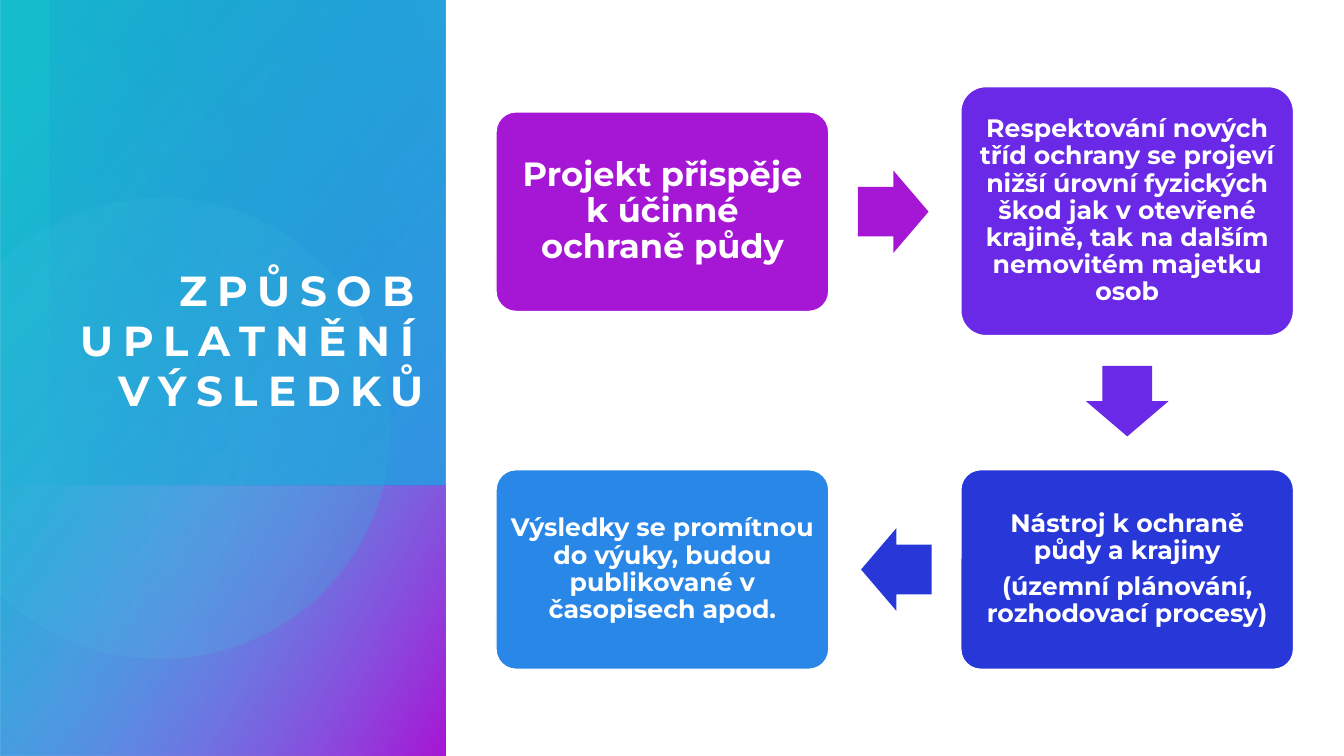
from pptx import Presentation
from pptx.dml.color import RGBColor
from pptx.enum.shapes import MSO_SHAPE
from pptx.enum.text import MSO_ANCHOR, MSO_AUTO_SIZE, PP_ALIGN
from pptx.oxml.ns import qn
from pptx.util import Pt
from lxml import etree

PX = 9144
FONT = "Montserrat"
RECT = MSO_SHAPE.RECTANGLE
ROUNDED = MSO_SHAPE.ROUNDED_RECTANGLE
ARROW = MSO_SHAPE.RIGHT_ARROW
CENTER, RIGHT = PP_ALIGN.CENTER, PP_ALIGN.RIGHT
MIDDLE, BOTTOM = MSO_ANCHOR.MIDDLE, MSO_ANCHOR.BOTTOM

WHITE = RGBColor(0xFF, 0xFF, 0xFF)
PURPLE = RGBColor(0xA6, 0x17, 0xD5)
VIOLET = RGBColor(0x69, 0x29, 0xE7)
INDIGO = RGBColor(0x28, 0x37, 0xD8)
BLUE = RGBColor(0x29, 0x87, 0xE7)
PALE_BLUE = RGBColor(0x7F, 0xB7, 0xF1)
TEAL = RGBColor(0x16, 0xBD, 0xCD)
PALE_TEAL = RGBColor(0x66, 0xE3, 0xEF)

PANELS = [
    ((-154, 154, 750, 442), 270, 50, [(8, TEAL, 100), (100, BLUE, 89)]),
    ((86, 395, 269, 442), 270, 60, [(0, PALE_BLUE, 0), (99, PURPLE, 100)]),
]
OVERLAY = ((5, 45, 481, 392), 90, 110, [(0, BLUE, 29), (100, INDIGO, 0)])

DISC_START = (164, 196)
DISC_CURVES = [
    [(261, 198), (350, 263), (378, 362)],
    [(413, 483), (343, 610), (222, 644)],
    [(146, 666), (68, 647), (12, 600)],
    [(0, 589)],
    [(0, 261)],
    [(15, 247)],
    [(38, 229), (65, 214), (95, 205)],
    [(118, 199), (141, 196), (164, 196)],
]

BOXES = [
    ((492, 111, 330, 198), PURPLE, 24, 10,
     ["Projekt přispěje k účinné ochraně půdy"]),
    ((953, 86, 330, 247), VIOLET, 18, 7,
     ["Respektování nových tříd ochrany se projeví nižší úrovní fyzických "
      "škod jak v otevřené krajině, tak na dalším nemovitém majetku osob"]),
    ((953, 466, 330, 198), INDIGO, 18, 7,
     ["Nástroj k ochraně půdy a krajiny",
      "(územní plánování, rozhodovací procesy)"]),
    ((492, 466, 330, 198), BLUE, 18, 7,
     ["Výsledky se promítnou do výuky, budou publikované v časopisech apod."]),
]
ARROWS = [
    ((851, 169), 0, PURPLE),
    ((1083, 357), 90, VIOLET),
    ((854, 524), 180, INDIGO),
]


def px(values):
    return [v * PX for v in values]


def write(tf, lines, size, align, anchor, inset=0, spacing=1.0, after=0,
          tracking=0):
    tf.word_wrap = True
    tf.auto_size = MSO_AUTO_SIZE.NONE
    tf.vertical_anchor = anchor
    tf.margin_left = tf.margin_right = inset * PX
    tf.margin_top = tf.margin_bottom = inset * PX
    for i, line in enumerate(lines):
        p = tf.add_paragraph() if i else tf.paragraphs[0]
        p.alignment = align
        p.line_spacing = spacing
        p.space_before = Pt(0)
        p.space_after = Pt(after)
        r = p.add_run()
        r.text = line
        r.font.name = FONT
        r.font.size = Pt(size)
        r.font.bold = True
        r.font.color.rgb = WHITE
        if tracking:
            r.font._element.set("spc", str(tracking * 100))


def add_solid(slide, kind, box, color):
    sp = slide.shapes.add_shape(kind, *px(box))
    sp.shadow.inherit = False
    sp.fill.solid()
    sp.fill.fore_color.rgb = color
    sp.line.fill.background()
    return sp


def set_gradient(sp, angle, stops):
    sp.shadow.inherit = False
    sp.line.fill.background()
    sp.fill.gradient()
    sp.fill.gradient_angle = 360 - angle
    for stop, (position, color, _) in zip(sp.fill.gradient_stops, stops):
        stop.position = position / 100
        stop.color.rgb = color
    colors = sp._element.spPr.iter(qn("a:srgbClr"))
    for element, (_, _, opacity) in zip(colors, stops):
        alpha = etree.SubElement(element, qn("a:alpha"))
        alpha.set("val", str(opacity * 1000))


def add_panel(slide, box, rotation, angle, stops):
    sp = slide.shapes.add_shape(RECT, *px(box))
    sp.rotation = rotation
    sp._element.spPr.find(qn("a:xfrm")).set("flipH", "1")
    set_gradient(sp, angle, stops)


def bezier(a, b, c, d, steps=24):
    for i in range(1, steps + 1):
        t = i / steps
        u = 1 - t
        yield tuple(u**3 * a[k] + 3 * u * u * t * b[k] + 3 * u * t * t * c[k]
                    + t**3 * d[k] for k in (0, 1))


def add_disc(slide):
    points = [DISC_START]
    for curve in DISC_CURVES:
        points += bezier(points[-1], *curve) if len(curve) == 3 else curve
    start, *rest = [px(point) for point in points]
    builder = slide.shapes.build_freeform(*start, scale=1.0)
    builder.add_line_segments(rest, close=True)
    sp = builder.convert_to_shape()
    set_gradient(sp, 14, [(36, PALE_TEAL, 6), (100, TEAL, 26)])


def add_title(slide, text):
    title = slide.shapes.title
    title.left, title.top, title.width, title.height = px((50, 95, 371, 317))
    write(title.text_frame, [text], 30, RIGHT, BOTTOM, tracking=7)
    slide.shapes._spTree.append(title._element)


def add_box(slide, box, color, size, inset, lines):
    sp = add_solid(slide, ROUNDED, box, color)
    sp.adjustments[0] = 0.1
    sp.line.color.rgb = WHITE
    sp.line.width = Pt(1)
    write(sp.text_frame, lines, size, CENTER, MIDDLE, inset=inset,
          spacing=0.9, after=size * 0.35)


def add_arrow(slide, corner, rotation, color):
    sp = add_solid(slide, ARROW, (*corner, 70, 82), color)
    sp.adjustments[0] = 0.6
    sp.adjustments[1] = 0.5
    sp.rotation = rotation


def main():
    prs = Presentation()
    prs.slide_width, prs.slide_height = px((1333, 750))
    slide = prs.slides.add_slide(prs.slide_layouts[5])
    for panel in PANELS:
        add_panel(slide, *panel)
    add_disc(slide)
    add_panel(slide, *OVERLAY)
    add_title(slide, "ZPŮSOB UPLATNĚNÍ VÝSLEDKŮ")
    for box in BOXES:
        add_box(slide, *box)
    for arrow in ARROWS:
        add_arrow(slide, *arrow)
    prs.save("out.pptx")


if __name__ == "__main__":
    main()
